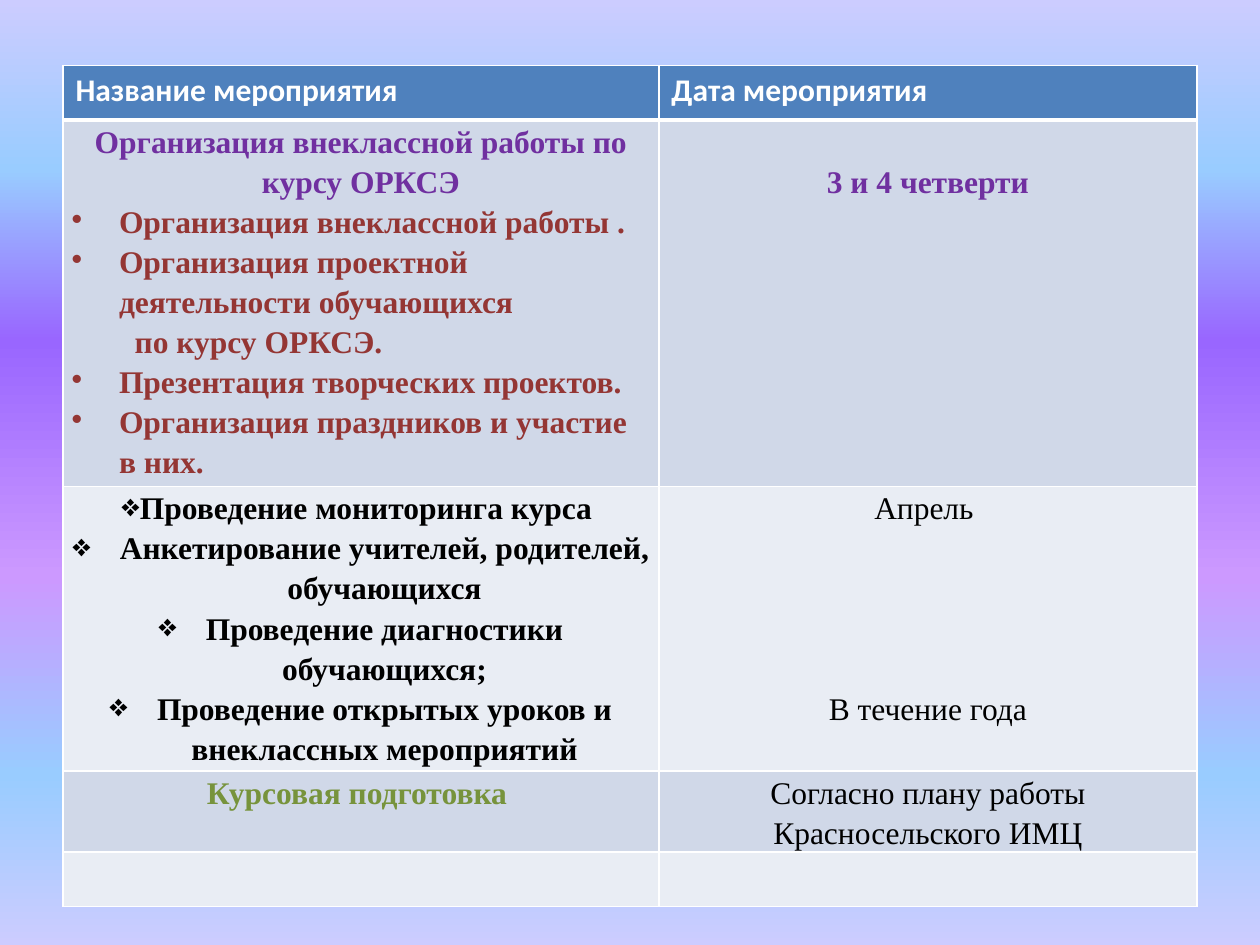
"""Build a slide with a timetable of course events on a striped gradient."""
import pptx
import pptx.dml.color
import pptx.enum.text
import pptx.oxml
import pptx.oxml.ns
import pptx.util
from lxml import etree

Pt = pptx.util.Pt
RGB = pptx.dml.color.RGBColor.from_string
CENTER = pptx.enum.text.PP_ALIGN.CENTER
LEFT = pptx.enum.text.PP_ALIGN.LEFT
qn = pptx.oxml.ns.qn

COLORS = {
    "header": "4F81BD", "dark_band": "D0D8E8", "light_band": "E9EDF4",
    "white": "FFFFFF", "black": "000000", "purple": "7030A0",
    "red": "943634", "green": "77933C",
    "lavender": "CCCCFF", "sky": "99CCFF", "violet": "9966FF", "orchid": "CC99FF",
}
GRADIENT = [(0, "lavender"), (18, "sky"), (36, "violet"),
            (61, "orchid"), (82, "sky"), (100, "lavender")]
LINE = 23
HANG = 27

STYLES = {
    "header": {"color": "white", "name": "Calibri", "align": LEFT, "spacing": 1},
    "title": {"color": "purple"},
    "task": {"color": "red", "align": LEFT, "bullet": "•", "left": HANG, "first": -HANG},
    "task_end": {"color": "red", "align": LEFT, "left": 36},
    "check_first": {"bullet": "❖"},
    "check": {"bullet": "❖", "left": HANG, "first": -HANG},
    "date": {"bold": False},
    "late_date": {"bold": False, "before": 4 * LINE},
    "training": {"color": "green"},
}
DEFAULTS = {"color": "black", "name": "Times New Roman", "bold": True, "align": CENTER,
            "spacing": 1.15, "bullet": None, "left": 0, "first": 0, "before": 0}

ROWS = [
    (31, "header", [[("header", "Название мероприятия")],
                    [("header", "Дата мероприятия")]]),
    (209.5, "dark_band", [
        [("title", "Организация внеклассной работы по курсу ОРКСЭ"),
         ("task", "Организация внеклассной работы ."),
         ("task", "Организация проектной деятельности обучающихся"),
         ("task_end", "по курсу ОРКСЭ."),
         ("task", "Презентация творческих проектов."),
         ("task", "Организация праздников и участие в них.")],
        [("title", "3 и 4 четверти")]]),
    (162.5, "light_band", [
        [("check_first", "Проведение мониторинга курса "),
         ("check", "Анкетирование учителей, родителей, обучающихся"),
         ("check", "Проведение диагностики обучающихся;"),
         ("check", "Проведение открытых уроков и внеклассных мероприятий")],
        [("date", "Апрель "), ("late_date", "В течение года")]]),
    (46.5, "dark_band", [[("training", "Курсовая подготовка ")],
                         [("date", "Согласно плану работы Красносельского ИМЦ")]]),
    (31, "light_band", [[], []]),
]


def add_paragraph(para, style, text):
    look = DEFAULTS | STYLES[style]
    layout = {"alignment": look["align"], "line_spacing": look["spacing"]}
    if look["before"]:
        layout["space_before"] = Pt(look["before"])
    for key, value in layout.items():
        setattr(para, key, value)
    properties = para._p.get_or_add_pPr()
    properties.set("marL", str(Pt(look["left"])))
    properties.set("indent", str(Pt(look["first"])))
    if look["bullet"]:
        etree.SubElement(properties, qn("a:buChar"), char=look["bullet"])
    span = para.add_run()
    span.text = text
    for key, value in {"size": Pt(18), "name": look["name"], "bold": look["bold"]}.items():
        setattr(span.font, key, value)
    span.font.color.rgb = RGB(COLORS[look["color"]])


def add_borders(cell, bottom):
    properties = cell._tc.get_or_add_tcPr()
    widths = {"a:lnL": 1, "a:lnR": 1, "a:lnT": 1, "a:lnB": bottom}
    for position, (tag, width) in enumerate(widths.items()):
        border = properties.makeelement(qn(tag), {"w": str(Pt(width))})
        fill = etree.SubElement(border, qn("a:solidFill"))
        etree.SubElement(fill, qn("a:srgbClr"), val=COLORS["white"])
        properties.insert(position, border)


deck = pptx.Presentation()
deck.slide_width, deck.slide_height = Pt(720), Pt(540)
page = deck.slides.add_slide(deck.slide_layouts[6])

backdrop = page.background.fill
backdrop.gradient()
backdrop.gradient_angle = 270
stops = next(page._element.iter(qn("a:gsLst")))
for stop in list(stops):
    stops.remove(stop)
for percent, color in GRADIENT:
    stop = etree.SubElement(stops, qn("a:gs"), pos=str(percent * 1000))
    etree.SubElement(stop, qn("a:srgbClr"), val=COLORS[color])

total = sum(height for height, band, cells in ROWS)
table = page.shapes.add_table(len(ROWS), 2, Pt(36), Pt(37.5), Pt(648), Pt(total)).table
for column, width in zip(table.columns, (340.5, 307.5)):
    column.width = Pt(width)

for row_index, (height, band, cells) in enumerate(ROWS):
    table.rows[row_index].height = Pt(height)
    for column_index, content in enumerate(cells):
        cell = table.cell(row_index, column_index)
        cell.fill.solid()
        cell.fill.fore_color.rgb = RGB(COLORS[band])
        add_borders(cell, 3 if band == "header" else 1)
        if content and band != "header":
            top = LINE if (row_index, column_index) == (1, 1) else 0
            margins = {"margin_left": 5, "margin_right": 5,
                       "margin_top": top, "margin_bottom": 0}
            for key, value in margins.items():
                setattr(cell, key, Pt(value))
        frame = cell.text_frame
        for order, (style, text) in enumerate(content):
            box_para = frame.add_paragraph() if order else frame.paragraphs[0]
            add_paragraph(box_para, style, text)

deck.save("out.pptx")
